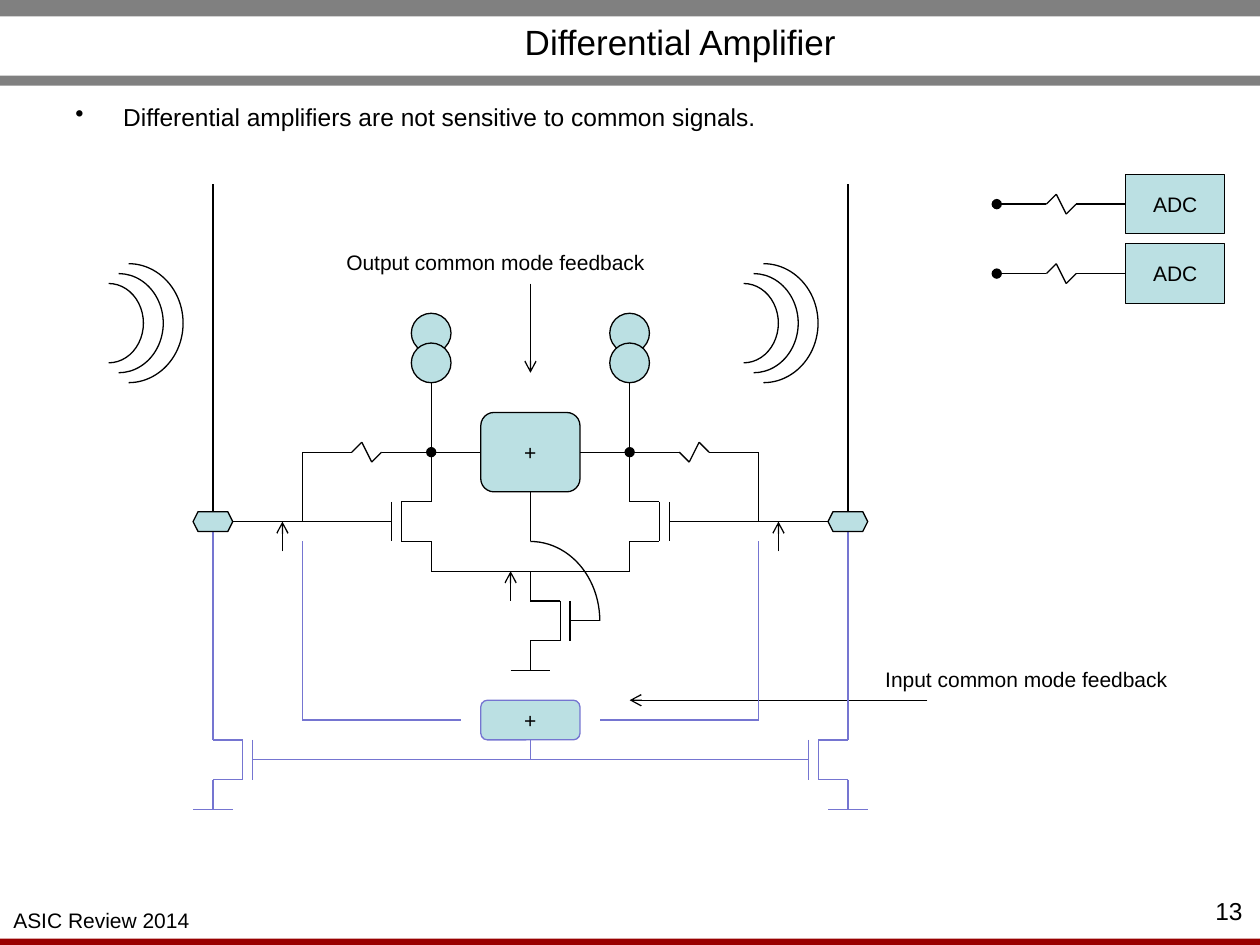
from dataclasses import dataclass
from itertools import pairwise
from typing import NamedTuple, Optional

from lxml.etree import SubElement
from pptx import Presentation
from pptx.dml.color import RGBColor
from pptx.enum.shapes import MSO_CONNECTOR as Link, MSO_SHAPE as Preset
from pptx.enum.text import MSO_ANCHOR as Anchor, PP_ALIGN as Align
from pptx.oxml.ns import qn
from pptx.util import Inches, Pt

BLACK, BLUE, TEAL, GRAY, RED = "000000", "7575D1", "BBE0E3", "808080", "990000"


@dataclass(frozen=True)
class Grid:
    left: float
    top: float
    pitch: float

    def x(self, column: float) -> int:
        return Inches(self.left + column * self.pitch)

    def y(self, row: float) -> int:
        return Inches(self.top + row * self.pitch)

    def size(self, cells: float) -> int:
        return Inches(cells * self.pitch)


class Box(NamedTuple):
    column: float
    row: float
    columns: float
    rows: float


class Wire(NamedTuple):
    start: tuple
    end: tuple
    color: str = BLACK
    head: Optional[str] = None
    tail: Optional[str] = None

    def mirrored(self, side: int) -> "Wire":
        return self._replace(start=(side * self.start[0], self.start[1]),
                             end=(side * self.end[0], self.end[1]))


class Part(NamedTuple):
    column: float
    row: float
    direction: int
    color: str = BLACK


class Label(NamedTuple):
    grid: Grid
    box: Box
    words: str
    size: int = 12
    align: Align = Align.CENTER
    anchor: Anchor = Anchor.TOP
    wrap: bool = False
    bullet: bool = False


PAGE = Grid(0, 0, 0.1)
CIRCUIT = Grid(4.21, 4.14, 10 / 127)

BARS = [(Box(0, 74.5, 100, 0.5), RED),
        (Box(0, 0, 100, 1.3), GRAY),
        (Box(0, 6, 100, 0.8), GRAY)]

LABELS = [
    Label(PAGE, Box(0, 71.5, 16.1, 3), "ASIC Review 2014"),
    Label(PAGE, Box(13, 1.4, 82, 3.8), "Differential Amplifier", 20,
          anchor=Anchor.MIDDLE, wrap=True),
    Label(PAGE, Box(5, 7.6, 90, 3.9),
          "Differential amplifiers are not sensitive to common signals.", 14,
          Align.LEFT, wrap=True, bullet=True),
    Label(PAGE, Box(94.9, 70.6, 4.7, 2.4), "13", 14, Align.RIGHT, wrap=True),
    Label(CIRCUIT, Box(-20, -28, 33, 3.8), "Output common mode feedback"),
    Label(CIRCUIT, Box(34, 14, 32, 3.8), "Input common mode feedback"),
]

TRANSISTORS = [Part(-10, 0, -1), Part(10, 0, 1), Part(0, 10, 1),
               Part(-32, 24, 1, BLUE), Part(32, 24, -1, BLUE)]
ADC_ROWS = (-32, -25)
RESISTORS = [Part(-23, -7, 1), Part(23, -7, -1),
             *(Part(47, row, 1) for row in ADC_ROWS)]

TWIN_WIRES = [
    Wire((10, -4), (10, -14)),
    Wire((10, -7), (5, -7), head="oval"),
    Wire((23, -7), (23, 0)),
    Wire((17, 0), (30, 0)),
    Wire((32, 0), (32, -34)),
    Wire((25, 3), (25, 0), tail="arrow"),
    Wire((32, 19), (32, 1), BLUE),
    Wire((30, 29), (34, 29), BLUE),
    Wire((23, 2), (23, 20), BLUE),
    Wire((23, 20), (7, 20), BLUE),
]
SINGLE_WIRES = [
    Wire((-10, 5), (10, 5)),
    Wire((0, -3), (0, 2)),
    Wire((-2, 15), (2, 15)),
    Wire((-25, 24), (25, 24), BLUE),
    Wire((0, 22), (0, 24), BLUE),
    Wire((-2, 8), (-2, 5), tail="arrow"),
    Wire((0, -24), (0, -15), tail="arrow"),
    Wire((40, 18), (10, 18), tail="arrow"),
    *(Wire((47, row), (52, row), head="oval") for row in ADC_ROWS),
]
SOURCE_ROWS = (-21, -18)
WAVE_COLUMNS = (-46, 18)


def rgb(color: str) -> RGBColor:
    return RGBColor.from_string(color)


def write(frame, words: str, size: int, align: Align, anchor: Anchor,
          wrap: bool, bullet: bool = False) -> None:
    for key, value in {"word_wrap": wrap, "vertical_anchor": anchor}.items():
        setattr(frame, key, value)
    paragraph = frame.paragraphs[0]
    paragraph.alignment = align
    if bullet:
        layout = paragraph._p.get_or_add_pPr()
        layout.set("marL", str(Inches(0.38)))
        layout.set("indent", str(Inches(-0.38)))
        SubElement(layout, qn("a:buChar")).set("char", "•")
    run = paragraph.add_run()
    run.text = words
    for key, value in {"name": "Arial", "size": Pt(size)}.items():
        setattr(run.font, key, value)
    run.font.color.rgb = rgb(BLACK)


def draw_label(slide, label: Label) -> None:
    grid, box = label.grid, label.box
    holder = slide.shapes.add_textbox(grid.x(box.column), grid.y(box.row),
                                      grid.size(box.columns), grid.size(box.rows))
    write(holder.text_frame, *label[2:])


def draw_box(slide, preset: Preset, box: Box, fill: Optional[str] = TEAL,
             line: Optional[str] = BLACK, words: str = "", grid: Grid = CIRCUIT,
             flipped: bool = False) -> None:
    shape = slide.shapes.add_shape(preset, grid.x(box.column), grid.y(box.row),
                                   grid.size(box.columns), grid.size(box.rows))
    shape.shadow.inherit = False
    for part, color in ((shape.fill, fill), (shape.line.fill, line)):
        if color:
            part.solid()
            part.fore_color.rgb = rgb(color)
        else:
            part.background()
    if line:
        shape.line.width = Pt(0.75)
    if flipped:
        shape._element.spPr.xfrm.set("flipV", "1")
    if words:
        write(shape.text_frame, words, 12, Align.CENTER, Anchor.MIDDLE, False)


def draw_wire(slide, wire: Wire) -> None:
    (x1, y1), (x2, y2) = wire.start, wire.end
    link = slide.shapes.add_connector(Link.STRAIGHT, CIRCUIT.x(x1), CIRCUIT.y(y1),
                                      CIRCUIT.x(x2), CIRCUIT.y(y2))
    link.line.width = Pt(0.75)
    link.line.color.rgb = rgb(wire.color)
    properties = link._element.spPr
    for tag, kind in (("a:headEnd", wire.head), ("a:tailEnd", wire.tail)):
        if kind:
            SubElement(properties.find(qn("a:ln")), qn(tag)).set("type", kind)
    SubElement(properties, qn("a:effectLst"))


def draw_strokes(slide, part: Part, strokes) -> None:
    for ends in strokes:
        start, end = ((part.column + part.direction * x, part.row + y) for x, y in ends)
        draw_wire(slide, Wire(start, end, part.color))


def main() -> None:
    deck = Presentation()
    for key, value in {"slide_width": Inches(10), "slide_height": Inches(7.5)}.items():
        setattr(deck, key, value)
    slide = deck.slides.add_slide(deck.slide_layouts[6])

    for bar, color in BARS:
        draw_box(slide, Preset.RECTANGLE, bar, color, None, grid=PAGE)

    channel = [((0, -2), (3, -2)), ((3, -2), (3, 2)), ((4, -2), (4, 2)),
               ((0, 2), (0, 5)), ((0, 2), (3, 2)), ((0, -5), (0, -2)),
               ((4, 0), (7, 0))]
    zigzag = [(0, 0), (3, 0), (5, 0), (6, -1), (7, 1), (8, 0), (10, 0), (13, 0)]
    for transistor in TRANSISTORS:
        draw_strokes(slide, transistor, channel)
    for resistor in RESISTORS:
        draw_strokes(slide, resistor, pairwise(zigzag))
    for wire in SINGLE_WIRES:
        draw_wire(slide, wire)

    for side in (-1, 1):
        for wire in TWIN_WIRES:
            draw_wire(slide, wire.mirrored(side))
        for row in SOURCE_ROWS:
            draw_box(slide, Preset.OVAL, Box(10 * side - 2, row, 4, 4))
        draw_box(slide, Preset.HEXAGON, Box(32 * side - 2, -1, 4, 2))

    for row in ADC_ROWS:
        draw_box(slide, Preset.RECTANGLE, Box(60, row - 3, 10, 6), words="ADC")
    draw_box(slide, Preset.ROUNDED_RECTANGLE, Box(-5, -11, 10, 8), words="+")
    draw_box(slide, Preset.ROUNDED_RECTANGLE, Box(-5, 18, 10, 4), line=BLUE, words="+")

    draw_box(slide, Preset.ARC, Box(-7, 2, 14, 16), None)
    for column in WAVE_COLUMNS:
        for ring in range(3):
            for flipped in (False, True):
                wave = Box(column, -24 - ring, 7 + 2 * ring, 8 + 2 * ring)
                draw_box(slide, Preset.ARC, wave, None, flipped=flipped)

    for label in LABELS:
        draw_label(slide, label)
    deck.save("out.pptx")


if __name__ == "__main__":
    main()
